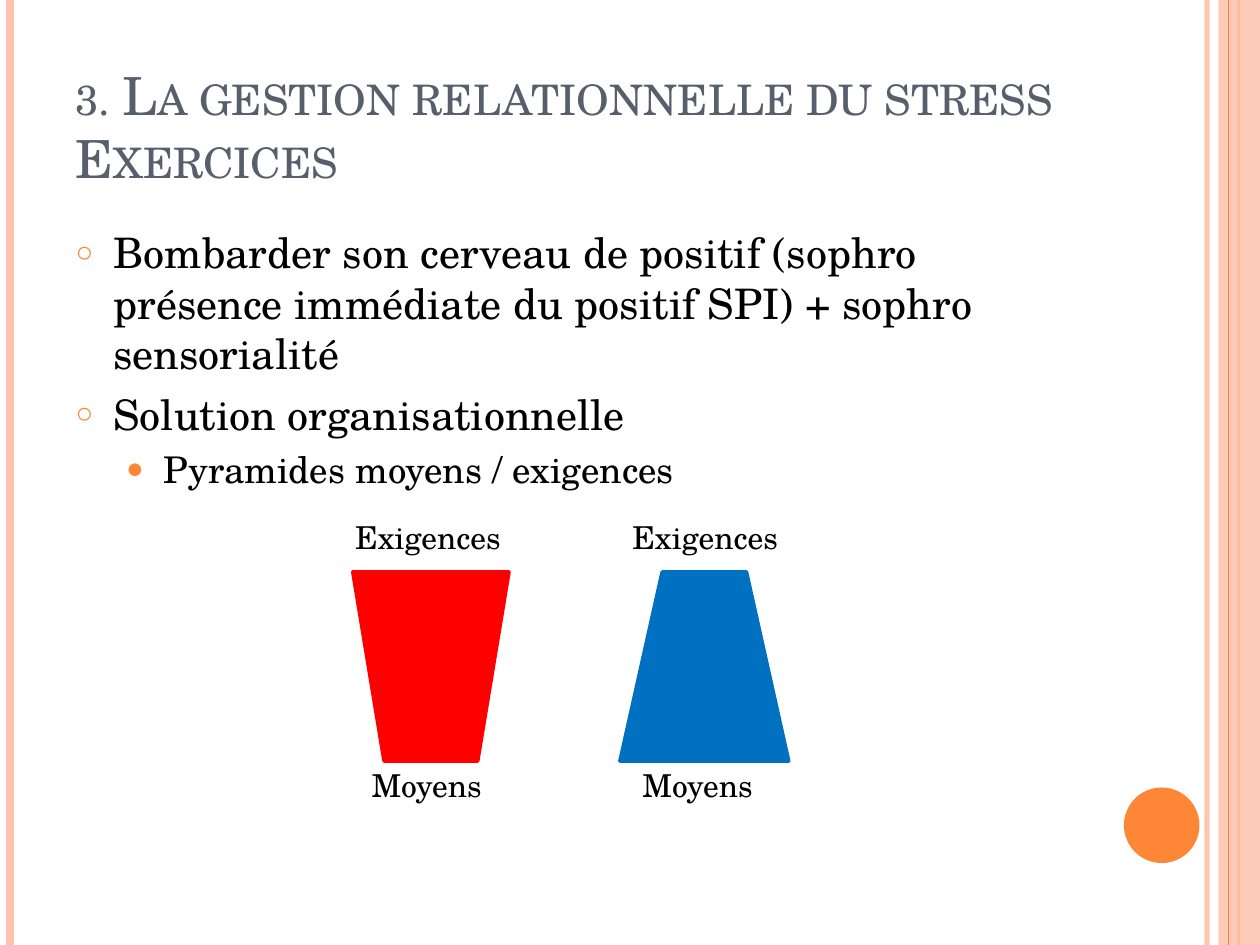
from lxml import etree
from pptx import Presentation
from pptx.dml.color import RGBColor
from pptx.enum import shapes, text
from pptx.oxml.ns import qn
from pptx.util import Inches, Pt

FONT = "TeX Gyre Schola"
ORANGE = RGBColor(0xFE, 0x86, 0x37)
PEACH = RGBColor(0xFE, 0xC3, 0xAE)
SLATE = RGBColor(0x57, 0x5F, 0x6D)
RED = RGBColor(0xFF, 0x00, 0x00)
BLUE = RGBColor(0x00, 0x70, 0xC0)
BLACK = RGBColor(0x00, 0x00, 0x00)
WIDE, HIGH = 10, 7.5


def write(para, words, size=18, color=BLACK, small=False):
    """Put formatted text in a paragraph."""
    run = para.add_run()
    run.text = words
    run.font.name = FONT
    run.font.size = Pt(size)
    run.font.color.rgb = color
    if small:
        run.font._element.set("cap", "small")
    para.alignment = text.PP_ALIGN.LEFT


def fade(fill, alpha):
    """Set the opacity of a solid fill, in percent."""
    tone = fill._xPr.find(qn("a:solidFill"))[0]
    etree.SubElement(tone, qn("a:alpha"), val=str(alpha * 1000))


def stripe(slide, x, color, width, alpha=None):
    line = slide.shapes.add_connector(
        shapes.MSO_CONNECTOR.STRAIGHT,
        Inches(x), Inches(0), Inches(x), Inches(HIGH))
    line.line.color.rgb = color
    line.line.width = Pt(width)
    if alpha:
        fade(line.line.fill, alpha)
    etree.SubElement(line._element.spPr, qn("a:effectLst"))


def solid(slide, kind, box, color, edge=None, alpha=None):
    shape = slide.shapes.add_shape(kind, *map(Inches, box))
    shape.shadow.inherit = False
    shape.fill.solid()
    shape.fill.fore_color.rgb = color
    if alpha:
        fade(shape.fill, alpha)
    if edge:
        shape.line.color.rgb = color
        shape.line.width = Pt(edge)
    else:
        shape.line.fill.background()


def label(slide, words, x, y, width):
    box = slide.shapes.add_textbox(*map(Inches, (x, y, width, 0.4)))
    box.text_frame.word_wrap = False
    box.text_frame.auto_size = text.MSO_AUTO_SIZE.SHAPE_TO_FIT_TEXT
    write(box.text_frame.paragraphs[0], words)


def place(holder, box, anchor):
    """Move a placeholder and return its text frame."""
    holder.left, holder.top, holder.width, holder.height = map(Inches, box)
    frame = holder.text_frame
    frame.auto_size = text.MSO_AUTO_SIZE.NONE
    frame.vertical_anchor = anchor
    return frame


def bullet(para, mark, percent, indent):
    props = para._p.get_or_add_pPr()
    props.set("marL", str(Inches(indent)))
    props.set("indent", str(Inches(-0.3)))
    tone = etree.SubElement(props, qn("a:buClr"))
    etree.SubElement(tone, qn("a:srgbClr"), val=str(ORANGE))
    etree.SubElement(props, qn("a:buSzPct"), val=str(percent * 1000))
    etree.SubElement(props, qn("a:buChar"), char=mark)


def decor(slide):
    stripe(slide, 9.58, PEACH, 3, alpha=93)
    stripe(slide, 0.08, PEACH, 4.5)
    stripe(slide, 9.83, ORANGE, 1.5)
    solid(slide, shapes.MSO_SHAPE.RECTANGLE,
          (9.67, 0, WIDE - 9.67, HIGH), PEACH, alpha=87)
    stripe(slide, 9.75, ORANGE, 0.75)
    solid(slide, shapes.MSO_SHAPE.OVAL, (8.92, 6.25, 0.6, 0.6), ORANGE)


def items(frame):
    rows = [
        ("Bombarder son cerveau de positif (sophro présence immédiate "
         "du positif SPI) + sophro sensorialité", 0),
        ("Solution organisationnelle", 0),
        ("Pyramides moyens / exigences", 1),
    ]
    # Format of each level: size, space before, mark, mark size, indent
    styles = [(24, 6, "○", 70, 0.3), (21, 4.2, "●", 80, 0.7)]
    for i, (words, level) in enumerate(rows):
        size, gap, mark, percent, indent = styles[level]
        para = frame.add_paragraph() if i else frame.paragraphs[0]
        para.level = level
        para.space_before = Pt(gap)
        write(para, words, size=size)
        bullet(para, mark, percent, indent)


def main():
    deck = Presentation()
    deck.slide_width, deck.slide_height = Inches(WIDE), Inches(HIGH)
    slide = deck.slides.add_slide(deck.slide_layouts[1])
    decor(slide)

    # Title and list
    title, body = slide.placeholders
    frame = place(title, (0.5, 0.3, 8.17, 1.25), text.MSO_ANCHOR.BOTTOM)
    write(frame.paragraphs[0], "3. La gestion relationnelle du stress Exercices",
          size=30, color=SLATE, small=True)
    items(place(body, (0.5, 1.75, 8.17, 5.33), text.MSO_ANCHOR.TOP))

    # Pyramids: demands above, means below
    kinds = shapes.MSO_SHAPE
    pairs = [
        (kinds.FLOWCHART_MANUAL_OPERATION, 2.8, 1.24, RED, 2.72, 2.85),
        (kinds.TRAPEZOID, 4.92, 1.34, BLUE, 4.92, 5),
    ]
    for kind, x, width, color, over, under in pairs:
        solid(slide, kind, (x, 4.54, width, 1.5), color, edge=2)
        label(slide, "Exigences", over, 4.06, 1.37)
        label(slide, "Moyens", under, 6.03, 1.09)

    deck.save("out.pptx")


if __name__ == "__main__":
    main()
